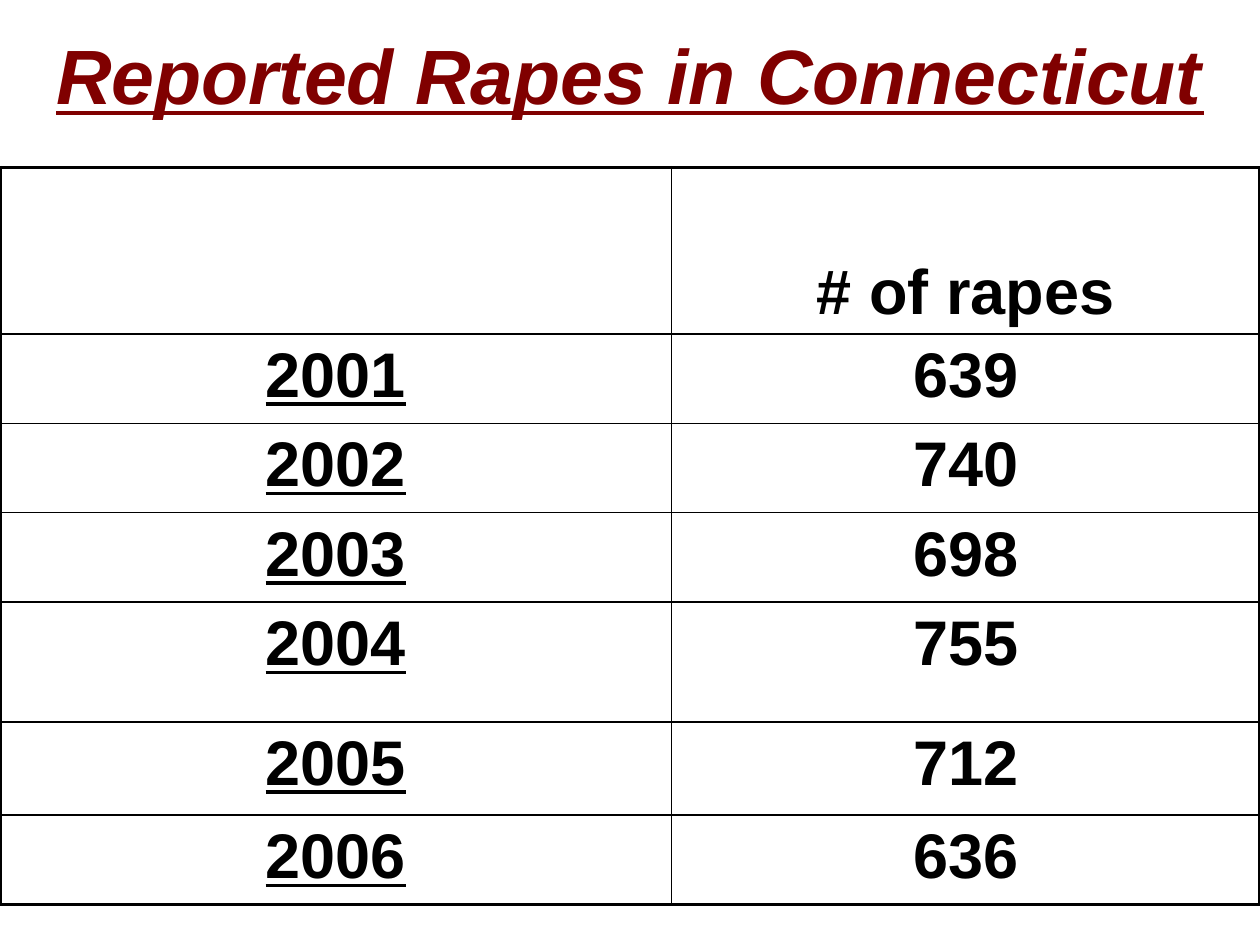
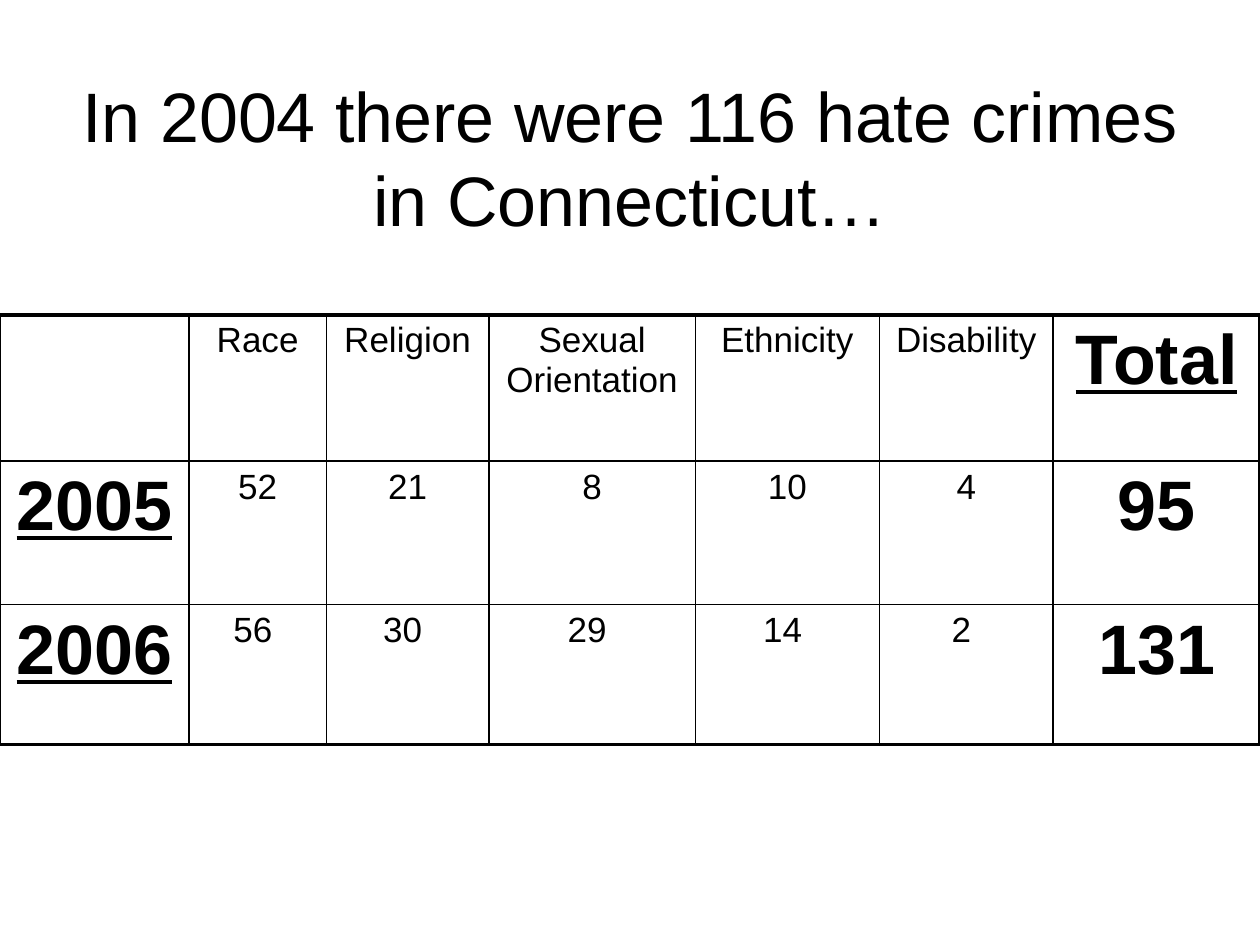
import pptx
import pptx.util
import pptx.dml.color
import pptx.enum.text
import pptx.oxml
import pptx.oxml.ns

Inches, Pt = pptx.util.Inches, pptx.util.Pt
PP_ALIGN = pptx.enum.text.PP_ALIGN
ANCHOR = pptx.enum.text.MSO_ANCHOR

COLORS = {"text": "000000", "accent": "800000", "border": "000000"}
FONT = "Arial"
THIN, THICK = 1, 2.25
TITLE_HEIGHT = 1.17

PLAIN = {"size": 20, "bold": False}
LARGE = {"size": 36, "bold": True}
TOTAL = {"size": 40, "bold": True}
UNDERLINED = {"underline": True}

SLIDES = [
    {
        "title": "Reported Rapes in Connecticut",
        "title_top": 0,
        "title_format": {"size": 44, "color": "accent", "bold": True,
                         "italic": True, "underline": True},
        "table_top": 1.33,
        "cols": [5.33, 4.67],
        "rows": [1.32, 0.71, 0.71, 0.71, 0.95, 0.74, 0.71],
        "cells": [
            ["", "# of rapes"],
            ["2001", "639"],
            ["2002", "740"],
            ["2003", "698"],
            ["2004", "755"],
            ["2005", "712"],
            ["2006", "636"],
        ],
        "col_formats": [LARGE | UNDERLINED, LARGE],
        "header_format": {},
        "header_anchor": ANCHOR.BOTTOM,
        "left_border": THICK,
    },
    {
        "title": "In 2004 there were 116 hate crimes\nin Connecticut…",
        "title_top": 0.66,
        "title_format": {"size": 40},
        "table_top": 2.5,
        "cols": [1.5, 1.09, 1.29, 1.64, 1.46, 1.38, 1.64],
        "rows": [1.16, 1.14, 1.11],
        "cells": [
            ["", "Race", "Religion", "Sexual\nOrientation", "Ethnicity", "Disability", "Total"],
            ["2005", "52", "21", "8", "10", "4", "95"],
            ["2006", "56 ", "30 ", "29 ", "14 ", "2 ", "131"],
        ],
        "col_formats": [TOTAL | UNDERLINED] + [PLAIN] * 5 + [TOTAL],
        "header_format": {6: UNDERLINED},
        "header_anchor": ANCHOR.TOP,
        "left_border": THIN,
    },
]


def write(tf, text, size, color="text", **formats):
    p = tf.paragraphs[0]
    p.text = text
    p.alignment = PP_ALIGN.CENTER
    for r in p.runs:
        r.font.name = FONT
        r.font.size = Pt(size)
        r.font.color.rgb = pptx.dml.color.RGBColor.from_string(COLORS[color])
        for name, value in formats.items():
            setattr(r.font, name, value)


def set_borders(cell, widths):
    """Add solid cell edges; widths maps L, R, T and B to points."""
    tcPr = cell._tc.get_or_add_tcPr()
    for side, width in widths.items():
        tcPr.append(pptx.oxml.parse_xml(
            f'<a:ln{side} {pptx.oxml.ns.nsdecls("a")} w="{int(Pt(width))}">'
            f'<a:solidFill><a:srgbClr val="{COLORS["border"]}"/></a:solidFill>'
            f'</a:ln{side}>'))


def add_title(slide, data):
    title = slide.shapes.title
    title.left, title.top = 0, Inches(data["title_top"])
    title.width, title.height = Inches(10), Inches(TITLE_HEIGHT)
    tf = title.text_frame
    tf.word_wrap = True
    tf.auto_size = pptx.enum.text.MSO_AUTO_SIZE.NONE
    tf.vertical_anchor = ANCHOR.MIDDLE
    write(tf, data["title"], **data["title_format"])


def add_table(slide, data):
    cols, rows = data["cols"], data["rows"]
    table = slide.shapes.add_table(
        len(rows), len(cols), 0, Inches(data["table_top"]),
        Inches(sum(cols)), Inches(sum(rows))).table
    table.first_row = table.horz_banding = False
    for column, width in zip(table.columns, cols):
        column.width = Inches(width)
    for row, height in zip(table.rows, rows):
        row.height = Inches(height)

    for i, texts in enumerate(data["cells"]):
        for j, text in enumerate(texts):
            cell = table.cell(i, j)
            set_borders(cell, {
                "L": data["left_border"] if j == 0 else THIN,
                "R": THICK if j == len(cols) - 1 else THIN,
                "T": THICK if i == 0 else THIN,
                "B": THICK if i == len(rows) - 1 else THIN,
            })
            cell.fill.background()
            formats = data["col_formats"][j]
            if i == 0:
                cell.vertical_anchor = data["header_anchor"]
                formats = formats | data["header_format"].get(j, {})
            if text:
                write(cell.text_frame, text, **formats)


def main():
    prs = pptx.Presentation()
    prs.slide_width, prs.slide_height = Inches(10), Inches(7.5)
    title_only = prs.slide_layouts[5]
    for data in SLIDES:
        slide = prs.slides.add_slide(title_only)
        add_title(slide, data)
        add_table(slide, data)
    prs.save("out.pptx")


if __name__ == "__main__":
    main()
